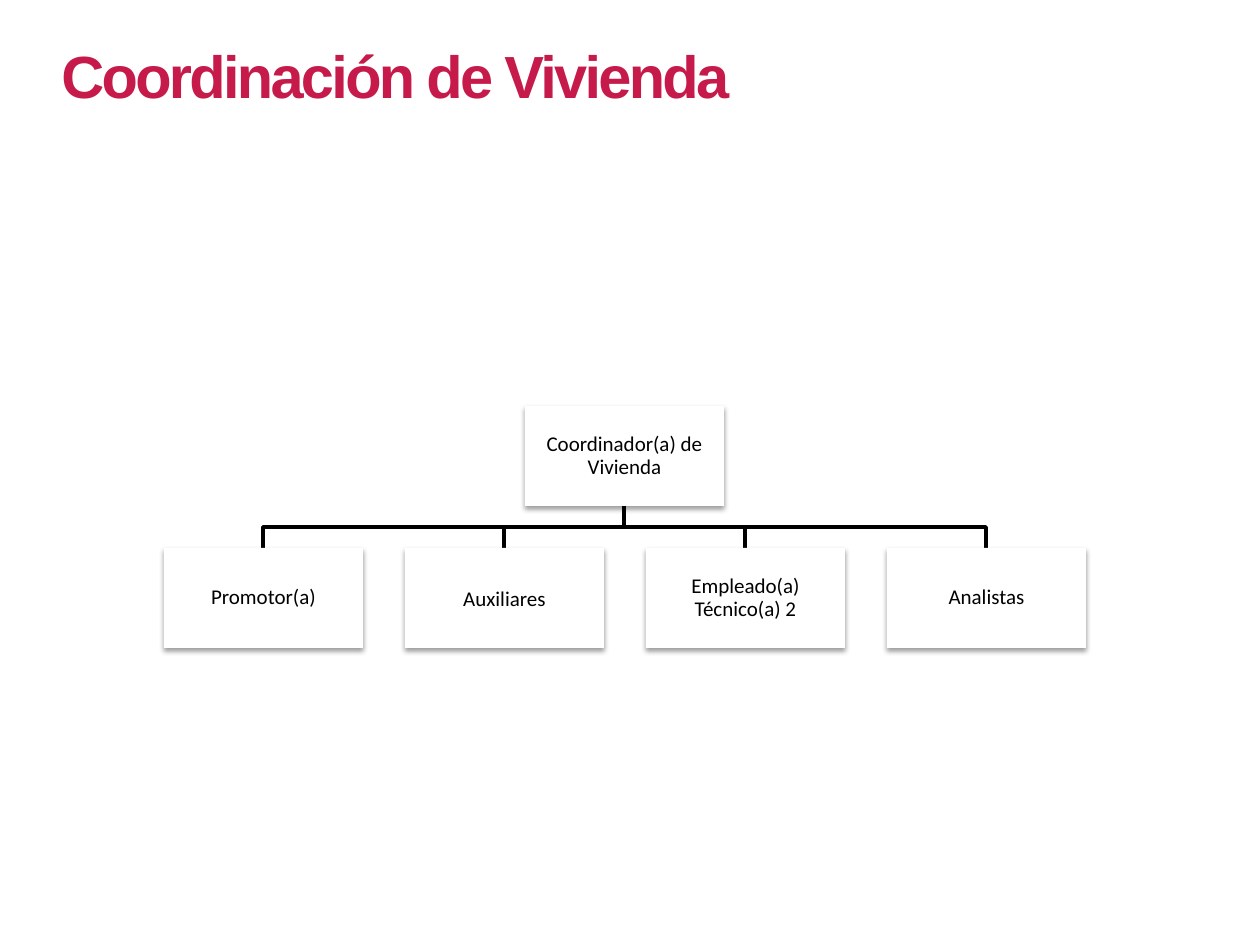
from lxml.etree import SubElement
from pptx import Presentation
from pptx.dml.color import RGBColor
from pptx.enum.shapes import MSO_SHAPE
from pptx.enum.text import MSO_ANCHOR, MSO_AUTO_SIZE, PP_ALIGN
from pptx.oxml.ns import qn
from pptx.util import Emu, Pt

PX = 914400 / 126
COLORS = {"title": "C51A4A", "box": "FFFFFF", "ink": "000000"}
BOX_W, BOX_H = 199, 100
ROOT_X, ROOT_Y = 525, 406
ROLE_X, ROLE_Y, ROLE_STEP = 164, 548, 241
ROLES = ["Promotor(a)", "Auxiliares", "Empleado(a) Técnico(a) 2", "Analistas"]


def px(n):
    return Emu(round(n * PX))


def rgb(name):
    return RGBColor.from_string(COLORS[name])


def add_run(p, text, font, size, color, bold=False):
    r = p.add_run()
    r.text = text
    r.font.name = font
    r.font.size = Pt(size)
    r.font.bold = bold
    r.font.color.rgb = rgb(color)
    return r


def add_title(slide, text):
    tf = slide.shapes.add_textbox(px(49), px(33), px(878), px(87)).text_frame
    tf.word_wrap = True
    tf.auto_size = MSO_AUTO_SIZE.SHAPE_TO_FIT_TEXT
    r = add_run(tf.paragraphs[0], text, "Arial", 34, "title", bold=True)
    r.font._element.set("spc", "-150")


def add_shadow(s):
    """Give the shape a soft shadow that falls straight down."""
    s.shadow.inherit = False
    effects = s._element.spPr.find(qn("a:effectLst"))
    shadow = SubElement(effects, qn("a:outerShdw"), blurRad=str(Pt(3.1)),
                        dist=str(Pt(1.6)), dir="5400000", rotWithShape="0")
    color = SubElement(shadow, qn("a:srgbClr"), val=COLORS["ink"])
    SubElement(color, qn("a:alpha"), val="38000")


def add_box(slide, x, y, text, tight=True):
    s = slide.shapes.add_shape(MSO_SHAPE.RECTANGLE, px(x), px(y), px(BOX_W), px(BOX_H))
    s.fill.solid()
    s.fill.fore_color.rgb = rgb("box")
    s.line.fill.background()
    add_shadow(s)
    tf = s.text_frame
    tf.word_wrap = True
    tf.vertical_anchor = MSO_ANCHOR.MIDDLE
    tf.margin_left = tf.margin_right = tf.margin_top = tf.margin_bottom = px(1)
    p = tf.paragraphs[0]
    p.alignment = PP_ALIGN.CENTER
    if tight:
        p.line_spacing = 0.9
        p.space_after = Pt(4.2)
    add_run(p, text, "Calibri", 12, "ink")


def add_branch(slide, x1, y1, x2, y2):
    """Draw an elbow that goes down, across at half height, and down again."""
    mid = (y1 + y2) // 2
    builder = slide.shapes.build_freeform(x1, y1, scale=PX)
    builder.add_line_segments([(x1, mid), (x2, mid), (x2, y2)], close=False)
    s = builder.convert_to_shape()
    s.fill.background()
    s.line.color.rgb = rgb("ink")
    s.line.width = Pt(2)
    s.shadow.inherit = False


def main():
    prs = Presentation()
    prs.slide_width, prs.slide_height = px(1260), px(945)
    slide = prs.slides.add_slide(prs.slide_layouts[6])
    add_title(slide, "Coordinación de Vivienda")

    role_xs = [ROLE_X + i * ROLE_STEP for i in range(len(ROLES))]
    half = BOX_W // 2
    for x in reversed(role_xs):
        add_branch(slide, ROOT_X + half, ROOT_Y + BOX_H, x + half, ROLE_Y)
    add_box(slide, ROOT_X, ROOT_Y, "Coordinador(a) de Vivienda")
    for x, role in zip(role_xs, ROLES):
        add_box(slide, x, ROLE_Y, role, tight=role != "Auxiliares")
    prs.save("out.pptx")


if __name__ == "__main__":
    main()
